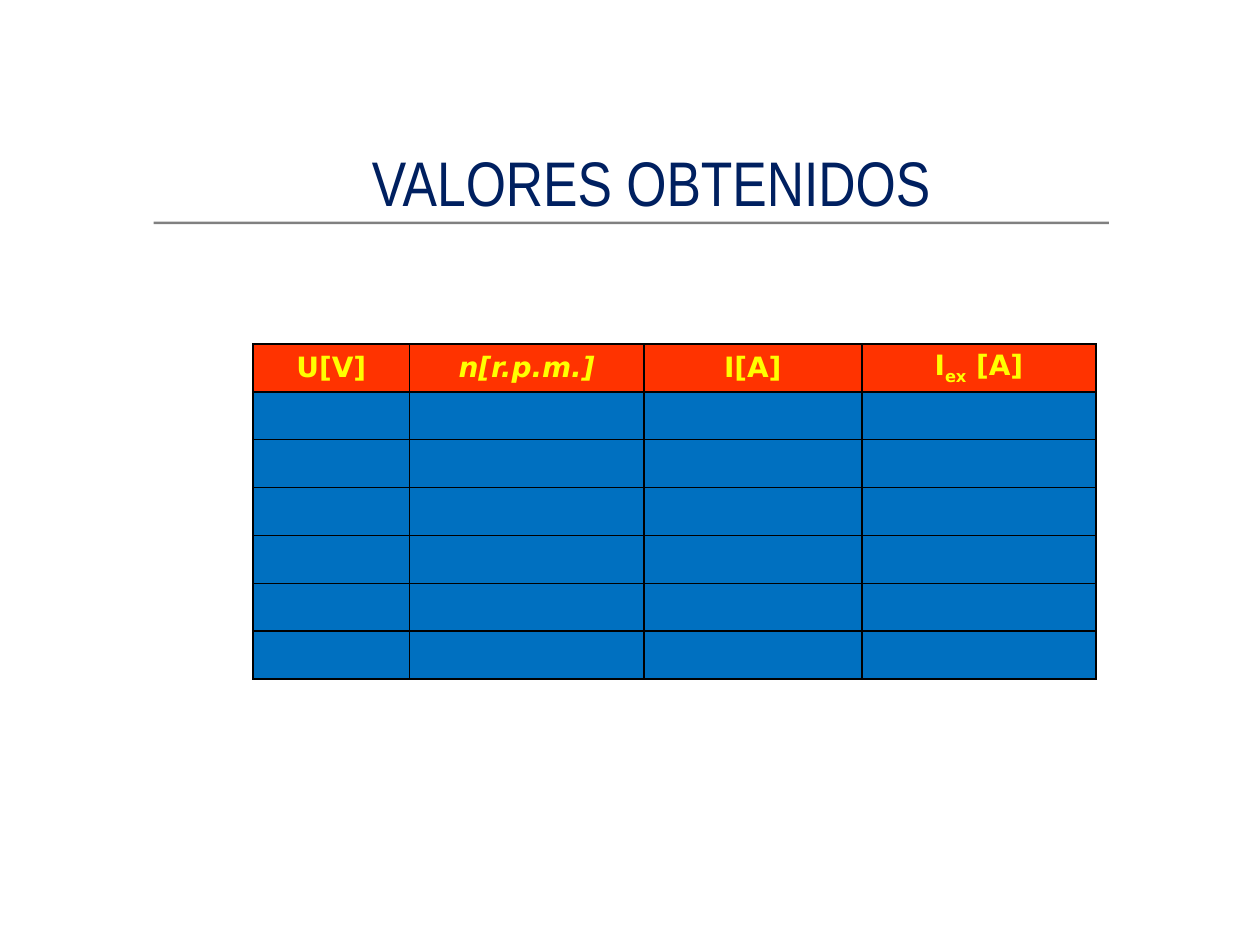
from lxml.etree import SubElement
from pptx import Presentation
from pptx.dml.color import RGBColor
from pptx.enum.shapes import MSO_SHAPE
from pptx.enum.text import MSO_ANCHOR, PP_ALIGN
from pptx.oxml.ns import qn
from pptx.util import Inches, Pt

COLUMN_WIDTHS = [1.24, 1.86, 1.73, 1.86]
ROW_HEIGHT = 0.38
ROW_COUNT = 7
# Each heading is a list of (text, format) spans.
HEADINGS = [
    [("U[V]", {})],
    [("n[r.p.m.]", {"italic": True})],
    [("I[A]", {})],
    [("I", {}), ("ex", {"baseline": "-25000"}), (" [A]", {})],
]
HEADING_FORMAT = {"name": "DejaVu Sans", "size": Pt(16), "bold": True}
TITLE_FORMAT = {"name": "Arial Narrow", "size": Pt(36), "bold": False}


def color(value):
    return RGBColor.from_string(value)


deck = Presentation()
deck.slide_width, deck.slide_height = Inches(10), Inches(7.5)
page = deck.slides.add_slide(deck.slide_layouts[5])

rule = page.shapes.add_shape(MSO_SHAPE.RECTANGLE, Inches(1.22), Inches(1.76),
                             Inches(7.58), Inches(0.02))
rule.shadow.inherit = False
rule.fill.solid()
rule.fill.fore_color.rgb = color("808080")
rule.line.fill.background()

title = page.shapes.title
title.left, title.top = Inches(0.75), Inches(0.9)
title.width, title.height = Inches(8.84), Inches(1.08)
title.text_frame.vertical_anchor = MSO_ANCHOR.MIDDLE
para = title.text_frame.paragraphs[0]
para.alignment = PP_ALIGN.CENTER
span = para.add_run()
span.text = "VALORES OBTENIDOS"
for name, value in TITLE_FORMAT.items():
    setattr(span.font, name, value)
span.font.color.rgb = color("002060")

table = page.shapes.add_table(
    ROW_COUNT, len(COLUMN_WIDTHS), Inches(2.01), Inches(2.73),
    Inches(sum(COLUMN_WIDTHS)), Inches(ROW_HEIGHT * ROW_COUNT)).table
for column, width in zip(table.columns, COLUMN_WIDTHS):
    column.width = Inches(width)
for row in table.rows:
    row.height = Inches(ROW_HEIGHT)

for cell in table.iter_cells():
    cell.margin_left = cell.margin_right = Inches(0.05)
    cell.margin_top = cell.margin_bottom = 0
    cell.vertical_anchor = MSO_ANCHOR.MIDDLE
    properties = cell._tc.get_or_add_tcPr()
    for side in ("lnL", "lnR", "lnT", "lnB"):
        border = SubElement(properties, qn(f"a:{side}"), w=str(Pt(1)))
        SubElement(SubElement(border, qn("a:solidFill")), qn("a:srgbClr"), val="000000")
    cell.fill.solid()
    cell.fill.fore_color.rgb = color("0070C0")

for index, spans in enumerate(HEADINGS):
    cell = table.cell(0, index)
    cell.fill.fore_color.rgb = color("FF3300")
    para = cell.text_frame.paragraphs[0]
    para.alignment = PP_ALIGN.CENTER
    for text, extra in spans:
        span = para.add_run()
        span.text = text
        for name, value in HEADING_FORMAT.items():
            setattr(span.font, name, value)
        span.font.italic = extra.get("italic", False)
        span.font.color.rgb = color("FFFF00")
        if "baseline" in extra:
            span._r.get_or_add_rPr().set("baseline", extra["baseline"])

deck.save("out.pptx")
